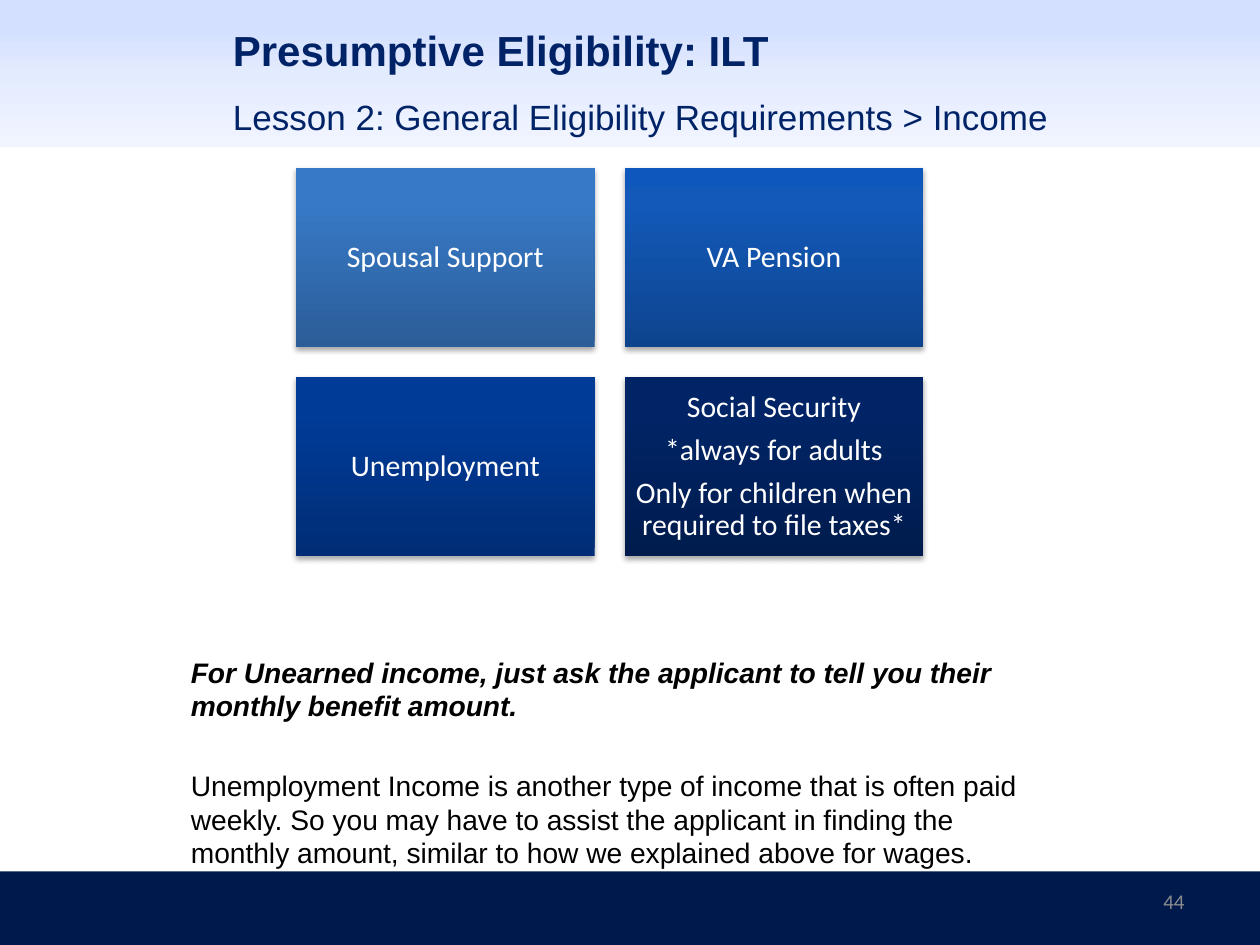
from lxml import etree
from pptx import Presentation
from pptx.dml.color import RGBColor
from pptx.enum import shapes, text
from pptx.oxml import ns
from pptx.util import Pt

NAVY = RGBColor(0x00, 0x22, 0x66)
FOOTER_NAVY = RGBColor(0x00, 0x19, 0x4D)
BLACK = RGBColor(0x00, 0x00, 0x00)
WHITE = RGBColor(0xFF, 0xFF, 0xFF)
GRAY = RGBColor(0x8C, 0x8C, 0x8C)

# Gradient stops: (position in percent, colour)
HEADER_STOPS = [(20, RGBColor(0xD4, 0xE0, 0xFF)), (50, RGBColor(0xE3, 0xEB, 0xFF)),
                (100, RGBColor(0xF1, 0xF5, 0xFF))]

# Income tiles: paragraphs and the colours from the bottom edge upwards
TILES = [
    (["Spousal Support"],
     (RGBColor(0x2B, 0x5D, 0x98), RGBColor(0x37, 0x79, 0xC6), RGBColor(0x35, 0x79, 0xC9))),
    (["VA Pension"],
     (RGBColor(0x0E, 0x44, 0x8E), RGBColor(0x12, 0x59, 0xB9), RGBColor(0x0E, 0x58, 0xBD))),
    (["Unemployment"],
     (RGBColor(0x00, 0x2D, 0x75), RGBColor(0x00, 0x3B, 0x98), RGBColor(0x00, 0x3B, 0x99))),
    (["Social Security", "*always for adults",
      "Only for children when required to file taxes*"],
     (RGBColor(0x00, 0x1C, 0x4E), RGBColor(0x00, 0x24, 0x66), RGBColor(0x00, 0x24, 0x66))),
]


def add_paragraph(frame, content, *, size, color, font="Arial", bold=False, italic=False,
                  align=text.PP_ALIGN.LEFT, line=None, before=0, after=0):
    """Write into the first empty paragraph, or append a new one."""
    paragraph = frame.paragraphs[0] if not frame.text else frame.add_paragraph()
    paragraph.alignment = align
    paragraph.space_before, paragraph.space_after = Pt(before), Pt(after)
    if line:
        paragraph.line_spacing = line
    run = paragraph.add_run()
    run.text = content
    run.font.name, run.font.size = font, Pt(size)
    run.font.bold, run.font.italic = bold, italic
    run.font.color.rgb = color


def add_text_box(slide, left, top, width, height, anchor=text.MSO_ANCHOR.TOP):
    box = slide.shapes.add_textbox(Pt(left), Pt(top), Pt(width), Pt(height))
    frame = box.text_frame
    frame.word_wrap = True
    frame.vertical_anchor = anchor
    return frame


def add_rectangle(slide, left, top, width, height):
    shape = slide.shapes.add_shape(shapes.MSO_SHAPE.RECTANGLE,
                                   Pt(left), Pt(top), Pt(width), Pt(height))
    shape.shadow.inherit = False
    shape.line.fill.background()
    return shape


def fill_gradient(shape, stops, angle):
    """Fill with any number of stops; angle runs counter-clockwise."""
    shape.fill.gradient()
    shape.fill.gradient_angle = angle
    stop_list = shape.fill._fill._gradFill.find(ns.qn("a:gsLst"))
    for stop in list(stop_list):
        stop_list.remove(stop)
    for position, color in stops:
        stop = etree.SubElement(stop_list, ns.qn("a:gs"), pos=str(position * 1000))
        etree.SubElement(stop, ns.qn("a:srgbClr"), val=str(color))


def add_drop_shadow(shape, blur, distance, opacity):
    effects = shape._element.spPr.find(ns.qn("a:effectLst"))
    shadow = etree.SubElement(effects, ns.qn("a:outerShdw"), blurRad=str(Pt(blur)),
                              dist=str(Pt(distance)), dir="5400000", rotWithShape="0")
    color = etree.SubElement(shadow, ns.qn("a:srgbClr"), val=str(BLACK))
    etree.SubElement(color, ns.qn("a:alpha"), val=str(opacity * 1000))


def add_header(slide, left, top, width, height):
    band = add_rectangle(slide, left, top, width, height)
    fill_gradient(band, HEADER_STOPS, 270)
    # Title and lesson line
    title = add_text_box(slide, left + 126, top + 6, 558, 45, text.MSO_ANCHOR.MIDDLE)
    add_paragraph(title, "Presumptive Eligibility: ILT", size=24, color=NAVY, bold=True)
    lesson = add_text_box(slide, left + 126, top + 48, 558, 36)
    lesson.margin_top = Pt(6.5)
    add_paragraph(lesson, "Lesson 2: General Eligibility Requirements > Income",
                  size=20, color=NAVY)


def add_tiles(slide, left, top, width, height, gap=17.2, columns=2):
    tile_width = (width - gap * (columns - 1)) / columns
    rows = len(TILES) // columns
    tile_height = (height - gap * (rows - 1)) / rows
    for index, (lines, colors) in enumerate(TILES):
        row, column = divmod(index, columns)
        tile = add_rectangle(slide, left + column * (tile_width + gap),
                             top + row * (tile_height + gap), tile_width, tile_height)
        fill_gradient(tile, zip((0, 80, 100), colors), 90)
        add_drop_shadow(tile, blur=3.1, distance=1.8, opacity=35)
        frame = tile.text_frame
        frame.word_wrap = True
        frame.vertical_anchor = text.MSO_ANCHOR.MIDDLE
        frame.margin_left = frame.margin_right = Pt(5)
        frame.margin_top = frame.margin_bottom = Pt(5)
        for content in lines:
            add_paragraph(frame, content, size=17, color=WHITE, font="Calibri",
                          align=text.PP_ALIGN.CENTER, line=0.9, after=6)


def add_body(slide, left, top, width, height):
    frame = add_text_box(slide, left, top, width, height)
    add_paragraph(frame, "For Unearned income, just ask the applicant to tell you their "
                  "monthly benefit amount.", size=16.1, color=BLACK, bold=True, italic=True,
                  line=Pt(19.2))
    add_paragraph(frame, "Unemployment Income is another type of income that is often paid "
                  "weekly. So you may have to assist the applicant in finding the monthly "
                  "amount, similar to how we explained above for wages.",
                  size=16.1, color=BLACK, line=Pt(19.2), before=26.4)


def add_footer(slide, left, top, width, height):
    band = add_rectangle(slide, left, top, width, height)
    band.fill.solid()
    band.fill.fore_color.rgb = FOOTER_NAVY
    # Slide number
    number = add_text_box(slide, left + width - 204, top + 2.5, 168, 28.8,
                          text.MSO_ANCHOR.MIDDLE)
    add_paragraph(number, "44", size=12, color=GRAY, font="Calibri",
                  align=text.PP_ALIGN.RIGHT)


def main():
    presentation = Presentation()
    presentation.slide_width, presentation.slide_height = Pt(720), Pt(540)
    slide = presentation.slides.add_slide(presentation.slide_layouts[6])
    add_header(slide, 0, 0, 720, 84)
    add_footer(slide, 0, 498, 720, 42)
    add_body(slide, 102, 371, 510, 126)
    add_tiles(slide, 169.2, 96, 358.4, 222)
    presentation.save("out.pptx")


if __name__ == "__main__":
    main()
